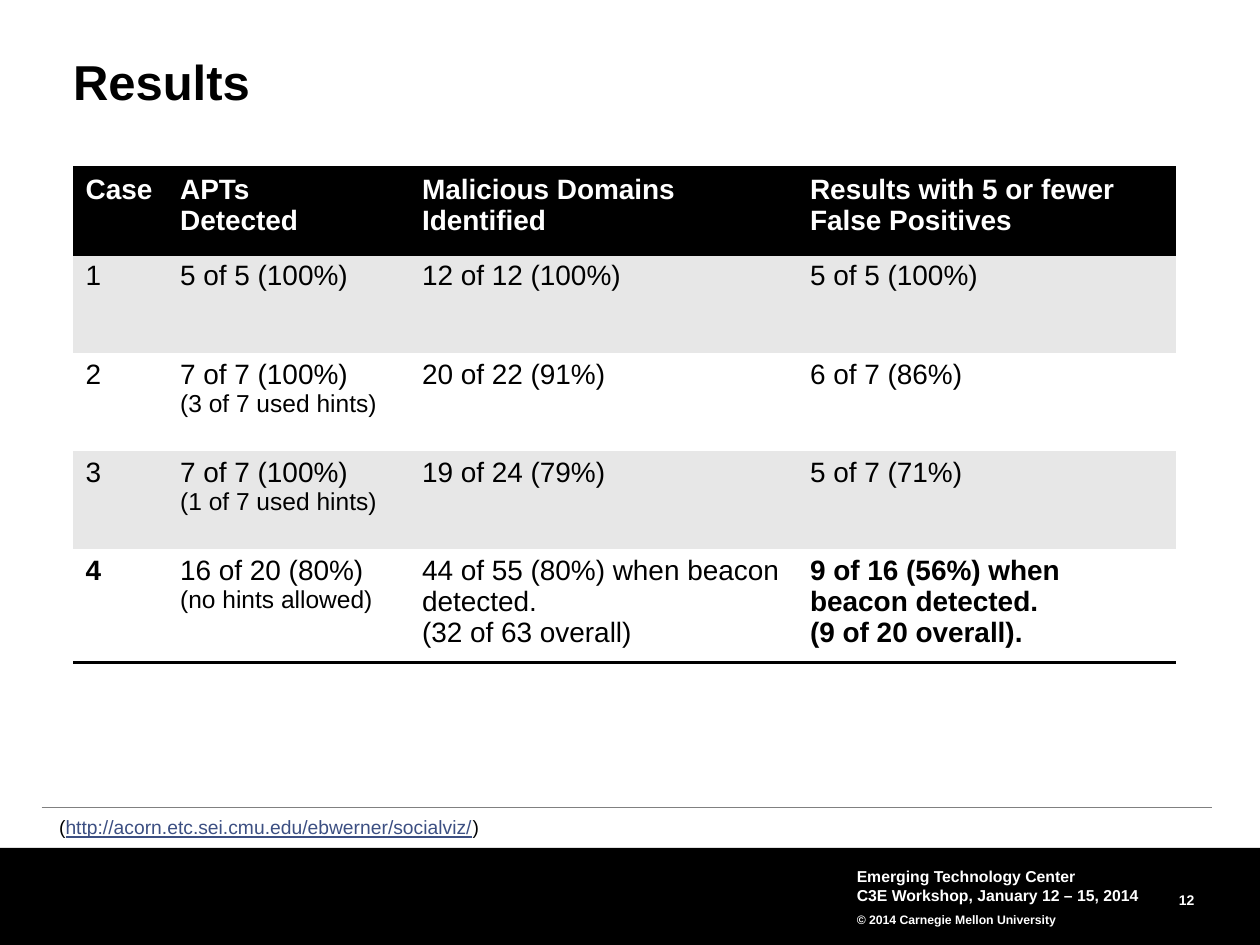
from lxml import etree
from pptx import Presentation
from pptx.dml.color import RGBColor
from pptx.enum.shapes import MSO_CONNECTOR, MSO_SHAPE
from pptx.enum.text import MSO_ANCHOR as Anchor, PP_ALIGN as Align
from pptx.oxml.ns import qn
from pptx.util import Inches, Pt

BLACK, WHITE, BAND, GRAY, LINK = "000000", "FFFFFF", "E7E7E7", "808080", "3C4F82"
PLAIN_TABLE_STYLE = "{2D5ABB26-0587-4C30-8999-92F81FD0307C}"
COLUMN_WIDTHS = (0.75, 1.92, 3.08, 3)
ROW_HEIGHTS = (0.69, 0.78, 0.78, 0.78, 0.84)
HEADERS = (
    ["Case"],
    ["APTs", "Detected"],
    ["Malicious Domains Identified"],
    ["Results with 5 or fewer False Positives"],
)
CASES = (
    (["1"], ["5 of 5 (100%)"], ["12 of 12 (100%)"], ["5 of 5 (100%)"]),
    (["2"], ["7 of 7 (100%)", "(3 of 7 used hints)"], ["20 of 22 (91%)"], ["6 of 7 (86%)"]),
    (["3"], ["7 of 7 (100%)", "(1 of 7 used hints)"], ["19 of 24 (79%)"], ["5 of 7 (71%)"]),
    (["4"], ["16 of 20 (80%)", "(no hints allowed)"],
     ["44 of 55 (80%) when beacon detected.", "(32 of 63 overall)"],
     ["9 of 16 (56%) when beacon detected.", "(9 of 20 overall)."]),
)


def rgb(color):
    return RGBColor.from_string(color)


def add_text(paragraph, text, size=16, color=BLACK, bold=False, underline=False,
             align=Align.LEFT, spacing=None):
    """Append a formatted run to the paragraph."""
    paragraph.alignment = align
    if spacing is not None:
        paragraph.line_spacing = spacing
    run = paragraph.add_run()
    run.text = text
    font = run.font
    font.name, font.size, font.bold, font.underline = "Arial", Pt(size), bold, underline
    font.color.rgb = rgb(color)


def next_paragraph(frame, index):
    return frame.add_paragraph() if index else frame.paragraphs[0]


def set_frame(frame, margin=0.0, anchor=Anchor.MIDDLE, wrap=True):
    frame.word_wrap = wrap
    frame.vertical_anchor = anchor
    frame.margin_left = frame.margin_right = Inches(margin)
    frame.margin_top = frame.margin_bottom = Inches(margin)


def add_box(slide, left, top, width, height, **frame_format):
    box = slide.shapes.add_textbox(Inches(left), Inches(top), Inches(width), Inches(height))
    set_frame(box.text_frame, **frame_format)
    return box.text_frame


def add_title(slide, left, top, width, height):
    title = slide.shapes.title
    title.left, title.top = Inches(left), Inches(top)
    title.width, title.height = Inches(width), Inches(height)
    set_frame(title.text_frame, anchor=Anchor.TOP)
    add_text(title.text_frame.paragraphs[0], "Results", size=28, bold=True, spacing=0.9)


def add_border(cell, side):
    line = etree.SubElement(cell._tc.get_or_add_tcPr(), qn(f"a:ln{side}"), w=str(Pt(2)))
    fill = etree.SubElement(line, qn("a:solidFill"))
    etree.SubElement(fill, qn("a:srgbClr"), val=BLACK)


def fill_cell(cell, lines, row, column):
    header, last = row == 0, row == len(CASES)
    sides = "TB" if header else "B" if last else ""
    for side in sides:
        add_border(cell, side)
    cell.fill.solid()
    cell.fill.fore_color.rgb = rgb(BLACK if header else BAND if row % 2 else WHITE)
    bold = header or (last and column in (0, 3))
    for index, line in enumerate(lines):
        hint = "hints" in line
        add_text(next_paragraph(cell.text_frame, index), line, size=14 if hint else 16,
                 color=WHITE if header else BLACK, bold=bold)


def add_results(slide, left, top):
    frame = slide.shapes.add_table(
        len(ROW_HEIGHTS), len(COLUMN_WIDTHS), Inches(left), Inches(top),
        Inches(sum(COLUMN_WIDTHS)), Inches(sum(ROW_HEIGHTS)))
    table = frame.table
    table.horz_banding = False
    for style in frame.element.iter(qn("a:tableStyleId")):
        style.text = PLAIN_TABLE_STYLE
    for column, width in zip(table.columns, COLUMN_WIDTHS):
        column.width = Inches(width)
    for row, height in zip(table.rows, ROW_HEIGHTS):
        row.height = Inches(height)
    for row, entries in enumerate((HEADERS, *CASES)):
        for column, lines in enumerate(entries):
            fill_cell(table.cell(row, column), lines, row, column)


def add_source_line(slide, left, top, width):
    rule = slide.shapes.add_connector(
        MSO_CONNECTOR.STRAIGHT, Inches(left), Inches(top), Inches(left + width), Inches(top))
    rule.line.color.rgb = rgb(GRAY)
    rule.line.width = Pt(0.5)
    etree.SubElement(rule.element.spPr, qn("a:effectLst"))
    frame = add_box(slide, left + 0.03, top + 0.01, 3.55, 0.29, margin=0.05, wrap=False)
    address = frame.paragraphs[0]
    add_text(address, "(", size=11, align=Align.CENTER)
    add_text(address, "http://acorn.etc.sei.cmu.edu/ebwerner/socialviz/", size=11,
             color=LINK, underline=True, align=Align.CENTER)
    add_text(address, ")", size=11, align=Align.CENTER)


def add_footer(slide, left, top, width, height):
    band = slide.shapes.add_shape(
        MSO_SHAPE.RECTANGLE, Inches(left), Inches(top), Inches(width), Inches(height))
    band.shadow.inherit = False
    band.fill.solid()
    band.fill.fore_color.rgb = rgb(BLACK)
    band.line.fill.background()
    number = add_box(slide, left + 8.56, top + 0.3, 0.92, 0.18)
    add_text(number.paragraphs[0], "12", size=8, color=WHITE, bold=True,
             align=Align.RIGHT, spacing=Pt(13))
    event = add_box(slide, left + 6.75, top + 0.1, 2.5, 0.58, margin=0.05)
    lines = (
        ("Emerging Technology Center", 9, None),
        ("C3E Workshop, January 12 – 15, 2014", 9, None),
        ("© 2014 Carnegie Mellon University", 7, 1.5),
    )
    for index, (line, size, spacing) in enumerate(lines):
        add_text(next_paragraph(event, index), line, size=size, color=WHITE, bold=True,
                 spacing=spacing)


def main():
    deck = Presentation()
    deck.slide_width, deck.slide_height = Inches(10), Inches(7.5)
    slide = deck.slides.add_slide(deck.slide_layouts[5])
    add_source_line(slide, 0.33, 6.41, 9.29)
    add_footer(slide, 0, 6.73, 10, 0.77)
    add_title(slide, 0.58, 0.46, 8.92, 0.42)
    add_results(slide, 0.58, 1.33)
    deck.save("out.pptx")


if __name__ == "__main__":
    main()
